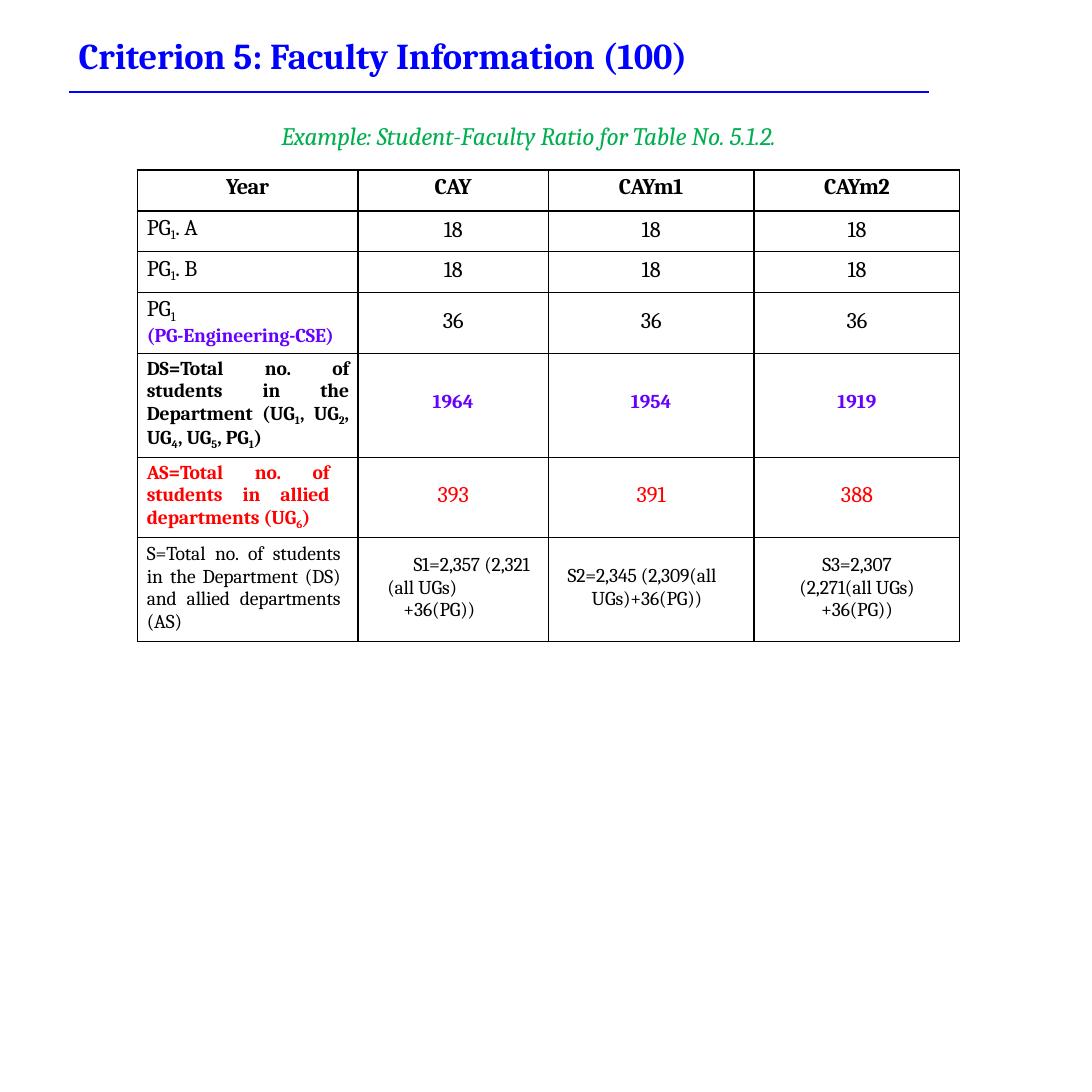
from lxml import etree
from pptx import Presentation
from pptx.dml.color import RGBColor
from pptx.enum import shapes, text
from pptx.oxml import ns
from pptx.util import Pt

BLUE = RGBColor(0x00, 0x00, 0xFF)
GREEN = RGBColor(0x00, 0xAF, 0x50)
BLACK = RGBColor(0x00, 0x00, 0x00)
PURPLE = RGBColor(0x66, 0x00, 0xFF)
RED = RGBColor(0xFF, 0x00, 0x00)

LEFT = text.PP_ALIGN.LEFT
CENTER = text.PP_ALIGN.CENTER
JUSTIFY = text.PP_ALIGN.JUSTIFY

COLUMN_WIDTHS = (157.8, 135.9, 147, 147)
ROW_HEIGHTS = (29.2, 29.2, 29.2, 43.3, 74.4, 57.4, 74.4)
LABEL_INDENT = 6.9


def write(paragraph, content, size=16, color=BLACK, bold=False, italic=False,
          align=LEFT, left=0, right=0, first=0, spacing=0):
    paragraph.alignment = align
    paragraph.space_before = Pt(0)
    properties = paragraph._p.get_or_add_pPr()
    for name, indent in (("marL", left), ("marR", right), ("indent", first)):
        properties.set(name, str(Pt(indent)))
    plain, *marked = content.split("_")
    pieces = [(plain, False)]
    for part in marked:
        pieces += [(part[0], True), (part[1:], False)]
    for piece, subscript in pieces:
        if not piece:
            continue
        run = paragraph.add_run()
        run.text = piece
        run.font.name = "Cambria"
        run.font.size = Pt(size)
        run.font.bold = bold
        run.font.italic = italic
        run.font.color.rgb = color
        run_properties = run._r.get_or_add_rPr()
        run_properties.set("spc", str(round(spacing * 100)))
        if subscript:
            run_properties.set("baseline", "-21000")


def set_frame(frame, top):
    frame.margin_left = frame.margin_right = frame.margin_bottom = Pt(0)
    frame.margin_top = Pt(top)
    frame.word_wrap = True
    frame.auto_size = text.MSO_AUTO_SIZE.NONE
    frame.vertical_anchor = text.MSO_ANCHOR.TOP


def add_title(slide):
    title = slide.shapes.title
    title.left, title.top, title.width, title.height = Pt(55.4), Pt(22.3), Pt(455), Pt(33.1)
    set_frame(title.text_frame, 1)
    write(title.text_frame.paragraphs[0], "Criterion 5: Faculty Information (100)",
          size=26, color=BLUE, bold=True, left=0.7, spacing=-0.1)


def add_rule(slide):
    rule = slide.shapes.add_connector(
        shapes.MSO_CONNECTOR.STRAIGHT, Pt(49), Pt(65.5), Pt(663.8), Pt(65.5))
    rule.line.color.rgb = BLUE
    rule.line.width = Pt(1.25)
    etree.SubElement(rule._element.spPr, ns.qn("a:effectLst"))


def add_caption(slide):
    caption = slide.shapes.add_textbox(Pt(200.2), Pt(85), Pt(380.9), Pt(23.8))
    set_frame(caption.text_frame, 1)
    write(caption.text_frame.paragraphs[0],
          "Example: Student-Faculty Ratio for Table No. 5.1.2.",
          size=18, color=GREEN, italic=True, left=0.7, spacing=-0.1)


def set_borders(cell):
    properties = cell._tc.get_or_add_tcPr()
    for position, side in enumerate(("lnL", "lnR", "lnT", "lnB")):
        border = etree.Element(ns.qn(f"a:{side}"), w=str(Pt(1)))
        fill = etree.SubElement(border, ns.qn("a:solidFill"))
        etree.SubElement(fill, ns.qn("a:srgbClr"), val=str(BLACK))
        properties.insert(position, border)


def fill_cell(cell, top, *paragraphs):
    cell.fill.background()
    set_borders(cell)
    cell.margin_left = cell.margin_right = cell.margin_bottom = Pt(0)
    cell.margin_top = Pt(top)
    cell.vertical_anchor = text.MSO_ANCHOR.TOP
    frame = cell.text_frame
    for number, (content, style) in enumerate(paragraphs):
        paragraph = frame.add_paragraph() if number else frame.paragraphs[0]
        write(paragraph, content, **style)


def label(content, **style):
    return content, {"left": LABEL_INDENT, **style}


def total_label(content, right, **style):
    return label(content, size=14, align=JUSTIFY, right=right, spacing=-0.1, **style)


def values(top, *contents, **style):
    return [(top, (content, {"align": CENTER, **style})) for content in contents]


def ratio_rows():
    small = {"size": 14, "spacing": -0.1}
    return [
        values(2.9, "Year", "CAY", "CAYm1", "CAYm2", bold=True, spacing=-0.4),
        [(2.9, label("PG_1. A")), *values(4.3, "18", "18", "18")],
        [(2.9, label("PG_1. B")), *values(4.3, "18", "18", "18")],
        [(2.9, label("PG_1"),
          label("(PG-Engineering-CSE)", size=14, color=PURPLE, bold=True, spacing=-0.1)),
         *values(11.5, "36", "36", "36")],
        [(2.9, total_label("DS=Total no. of students in the Department "
                           "(UG_1, UG_2, UG_4, UG_5, PG_1)", 6.5, bold=True)),
         *values(27, "1964", "1954", "1919", size=14, color=PURPLE, bold=True)],
        [(2.9, total_label("AS=Total no. of students in allied departments (UG_6)",
                           20.5, color=RED, bold=True)),
         *values(18, "393", "391", "388", color=RED)],
        [(3.6, total_label("S=Total no. of students in the Department (DS) "
                           "and allied departments (AS)", 12.6)),
         (11.5, ("S1=2,357 (2,321 (all UGs)", {**small, "left": 20.9, "first": 18.7}),
          ("+36(PG))", {**small, "left": 32.4})),
         (19.4, ("S2=2,345 (2,309(all UGs)+36(PG))",
                 {**small, "left": 31, "first": -17.3})),
         (11.5, ("S3=2,307 (2,271(all UGs)+36(PG))",
                 {**small, "align": CENTER, "left": 31, "right": 31}))],
    ]


def add_ratio_table(slide):
    rows = ratio_rows()
    table = slide.shapes.add_table(
        len(rows), len(COLUMN_WIDTHS), Pt(98), Pt(121.5),
        Pt(sum(COLUMN_WIDTHS)), Pt(sum(ROW_HEIGHTS))).table
    table.first_row = table.horz_banding = False
    for column, width in zip(table.columns, COLUMN_WIDTHS):
        column.width = Pt(width)
    for row, height, contents in zip(table.rows, ROW_HEIGHTS, rows):
        row.height = Pt(height)
        for cell, (top, *paragraphs) in zip(row.cells, contents):
            fill_cell(cell, top, *paragraphs)


def main():
    deck = Presentation()
    deck.slide_width = deck.slide_height = Pt(780)
    slide = deck.slides.add_slide(deck.slide_layouts[5])
    add_title(slide)
    add_rule(slide)
    add_caption(slide)
    add_ratio_table(slide)
    deck.save("out.pptx")


if __name__ == "__main__":
    main()
